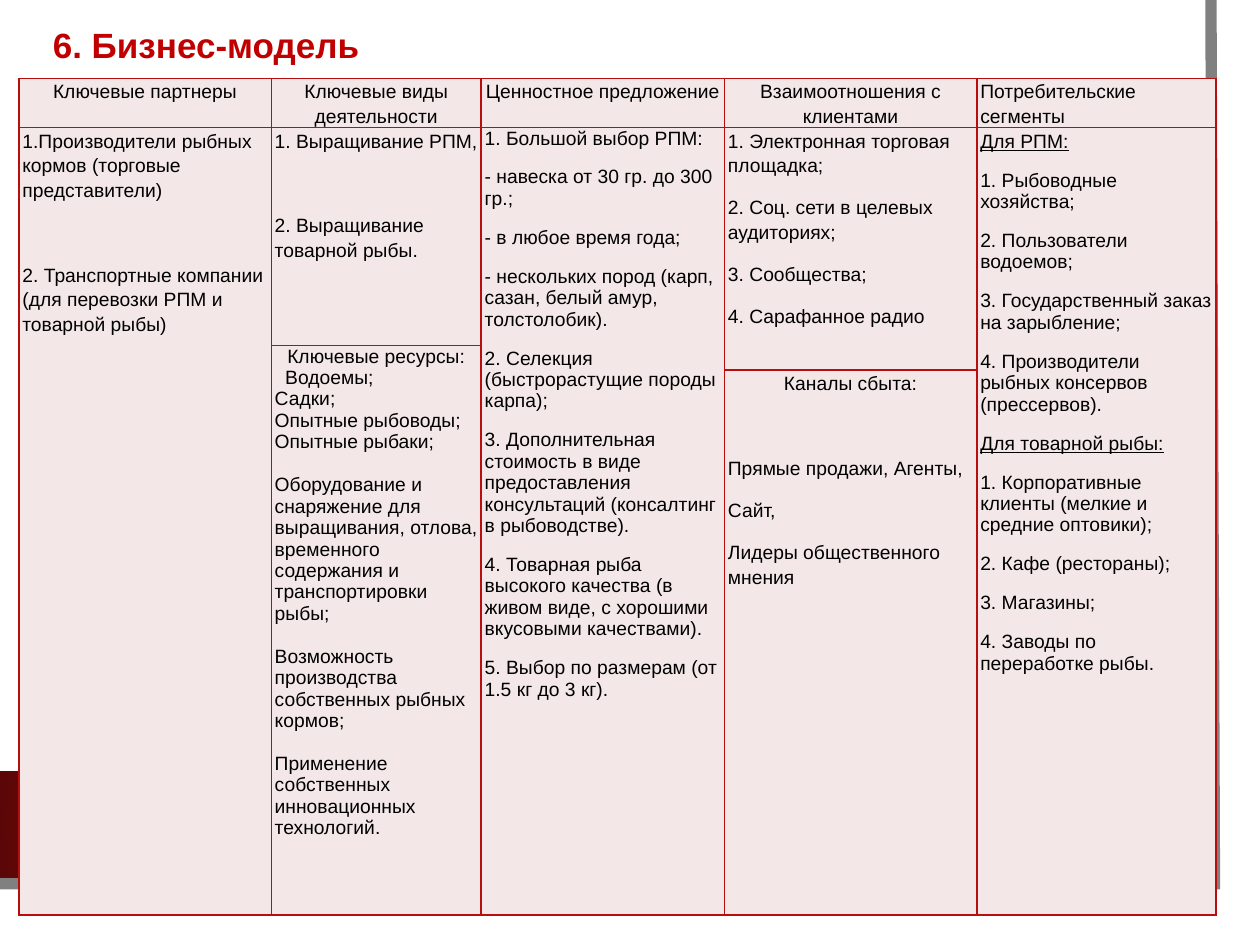
from dataclasses import dataclass

from lxml import etree
from pptx import Presentation
from pptx.dml.color import RGBColor
from pptx.enum.shapes import MSO_SHAPE
from pptx.enum.text import MSO_ANCHOR, PP_ALIGN
from pptx.oxml.ns import qn
from pptx.util import Pt

CENTER, LEFT = PP_ALIGN.CENTER, PP_ALIGN.LEFT
MIDDLE, TOP = MSO_ANCHOR.MIDDLE, MSO_ANCHOR.TOP
RECTANGLE = MSO_SHAPE.RECTANGLE
FONT = "Arial"
COLORS = {
    "red": "B80E0F", "dark_red": "5C0707", "frame": "808080",
    "cell": "F3E7E7", "text": "000000", "title": "C00000",
}


@dataclass
class Line:
    """One paragraph of a table cell; lengths in points."""
    text: str
    align: int = LEFT
    spacing: float = 1.15
    before: float = 0
    after: float = 10
    indent: float = 0
    underline: bool = False


def lines(*texts, **style):
    return [Line(text, **style) for text in texts]


class SlideBuilder:
    def __init__(self, slide):
        self.slide = slide

    def color(self, name):
        return RGBColor.from_string(COLORS[name])

    def radial_band(self, left, top, width, height, stops):
        shape = self.slide.shapes.add_shape(
            RECTANGLE, Pt(left), Pt(top), Pt(width), Pt(height))
        shape.shadow.inherit = False
        shape.line.fill.background()
        shape.fill.gradient()
        for stop, (position, color) in zip(shape.fill.gradient_stops, stops):
            stop.position = position
            stop.color.rgb = self.color(color)
        gradient = shape.element.spPr.find(qn("a:gradFill"))
        gradient.remove(gradient.find(qn("a:lin")))
        radial = etree.SubElement(gradient, qn("a:path"), path="circle")
        etree.SubElement(radial, qn("a:fillToRect"),
                         dict.fromkeys("ltrb", "50000"))

    def polyline(self, points, color, width):
        builder = self.slide.shapes.build_freeform(
            *points[0], scale=float(Pt(1)))
        builder.add_line_segments(points[1:], close=False)
        shape = builder.convert_to_shape()
        shape.shadow.inherit = False
        shape.fill.background()
        shape.line.color.rgb = self.color(color)
        shape.line.width = Pt(width)
        outline = shape.element.spPr.find(qn("a:ln"))
        etree.SubElement(outline, qn("a:miter"), lim="800000")

    def title(self, text, left, top, width, height):
        shape = self.slide.shapes.title
        shape.left, shape.top = Pt(left), Pt(top)
        shape.width, shape.height = Pt(width), Pt(height)
        frame = shape.text_frame
        frame.text = text
        frame.word_wrap = False
        frame.vertical_anchor = MIDDLE
        paragraph = frame.paragraphs[0]
        paragraph.alignment = CENTER
        self.format_font(paragraph.runs[0].font, 20, "title", bold=True)

    def format_font(self, font, size, color, bold=False):
        font.name, font.size, font.bold = FONT, Pt(size), bold
        font.color.rgb = self.color(color)

    def table(self, left, top, columns, rows):
        shape = self.slide.shapes.add_table(
            len(rows), len(columns), Pt(left), Pt(top),
            Pt(sum(columns)), Pt(sum(rows)))
        table = shape.table
        table.first_row = table.horz_banding = False
        for column, width in zip(table.columns, columns):
            column.width = Pt(width)
        for row, height in zip(table.rows, rows):
            row.height = Pt(height)
        return table

    def cell(self, table, row, column, content, row_span=1):
        cell = table.cell(row, column)
        if row_span > 1:
            cell.merge(table.cell(row + row_span - 1, column))
        cell.margin_left = cell.margin_right = Pt(2)
        cell.margin_top = cell.margin_bottom = 0
        cell.vertical_anchor = TOP
        self.borders(cell)
        cell.fill.solid()
        cell.fill.fore_color.rgb = self.color("cell")
        frame = cell.text_frame
        frame.text = "\n".join(line.text for line in content)
        for paragraph, line in zip(frame.paragraphs, content):
            paragraph.alignment = line.align
            paragraph.line_spacing = line.spacing
            paragraph.space_before = Pt(line.before)
            paragraph.space_after = Pt(line.after)
            if line.indent:
                paragraph._p.get_or_add_pPr().set(
                    "indent", str(Pt(line.indent)))
            font = paragraph.runs[0].font
            self.format_font(font, 11, "text")
            font.underline = line.underline

    def borders(self, cell):
        properties = cell._tc.get_or_add_tcPr()
        for side in ("a:lnL", "a:lnR", "a:lnT", "a:lnB"):
            border = etree.SubElement(properties, qn(side), w=str(Pt(1)))
            fill = etree.SubElement(border, qn("a:solidFill"))
            etree.SubElement(fill, qn("a:srgbClr"), val=COLORS["red"])


HEADERS = [
    Line("Ключевые партнеры", CENTER),
    Line("Ключевые виды деятельности", CENTER),
    Line("Ценностное предложение", CENTER),
    Line("Взаимоотношения с клиентами", CENTER),
    Line("Потребительские сегменты"),
]
GAP = 24.3  # one empty line between topics
PARTNERS = [
    Line("1.Производители рыбных кормов (торговые представители)"),
    Line("2. Транспортные компании (для перевозки РПМ и товарной рыбы)",
         before=GAP),
]
ACTIVITIES = [
    Line("1. Выращивание РПМ,"),
    Line("2. Выращивание товарной рыбы.", before=GAP),
]
RESOURCES = [
    Line("Ключевые ресурсы:", CENTER, spacing=1, after=0),
    Line("Водоемы;", spacing=1, after=0, indent=6),
    *lines("Садки;", "Опытные рыбоводы; Опытные рыбаки;", spacing=1, after=0),
    *lines(
        "Оборудование и снаряжение для выращивания, отлова, временного "
        "содержания и транспортировки рыбы;",
        "Возможность производства собственных рыбных кормов;",
        "Применение собственных инновационных технологий.",
        spacing=1, before=12.3, after=0),
]
VALUE = lines(
    "1. Большой выбор РПМ:",
    "- навеска от 30 гр. до 300 гр.;",
    "- в любое время года;",
    "- нескольких пород (карп, сазан, белый амур, толстолобик).",
    "2. Селекция (быстрорастущие породы карпа);",
    "3. Дополнительная стоимость в виде предоставления консультаций "
    "(консалтинг в рыбоводстве).",
    "4. Товарная рыба высокого качества (в живом виде, с хорошими "
    "вкусовыми качествами).",
    "5. Выбор по размерам (от 1.5 кг до 3 кг).",
    spacing=1)
RELATIONS = lines(
    "1. Электронная торговая площадка;", "2. Соц. сети в целевых аудиториях;",
    "3. Сообщества;", "4. Сарафанное радио")
CHANNELS = [
    Line("Каналы сбыта:", CENTER),
    Line("Прямые продажи, Агенты,", before=GAP),
    *lines("Сайт,", "Лидеры общественного мнения"),
]
SEGMENTS = [
    Line("Для РПМ:", underline=True),
    *lines("1. Рыбоводные хозяйства;", "2. Пользователи водоемов;",
           "3. Государственный заказ на зарыбление;",
           "4. Производители рыбных консервов (прессервов).", spacing=1),
    Line("Для товарной рыбы:", spacing=1, underline=True),
    *lines("1. Корпоративные клиенты (мелкие и средние оптовики);",
           "2. Кафе (рестораны);", "3. Магазины;",
           "4. Заводы по переработке рыбы.", spacing=1),
]


def main():
    presentation = Presentation()
    presentation.slide_width, presentation.slide_height = Pt(720), Pt(540)
    slide = presentation.slides.add_slide(presentation.slide_layouts[5])
    builder = SlideBuilder(slide)

    # Title
    builder.title("6. Бизнес-модель", 22.3, 9.4, 191, 31.7)

    # Backdrop
    builder.radial_band(0, 440.6, 691, 61.2,
                        [(0.34, "red"), (1, "dark_red")])
    builder.polyline([(692.3, 0), (694, 505.4), (-1.4, 504.7)], "frame", 6.5)

    # Business model table
    table = builder.table(10.8, 44.8, [144.2, 120, 139, 144.2, 136.8],
                          [28, 124.6, 14, 311.5])
    for column, header in enumerate(HEADERS):
        builder.cell(table, 0, column, [header])
    builder.cell(table, 1, 0, PARTNERS, row_span=3)
    builder.cell(table, 1, 1, ACTIVITIES)
    builder.cell(table, 2, 1, RESOURCES, row_span=2)
    builder.cell(table, 1, 2, VALUE, row_span=3)
    builder.cell(table, 1, 3, RELATIONS, row_span=2)
    builder.cell(table, 3, 3, CHANNELS)
    builder.cell(table, 1, 4, SEGMENTS, row_span=3)

    presentation.save("out.pptx")


if __name__ == "__main__":
    main()
